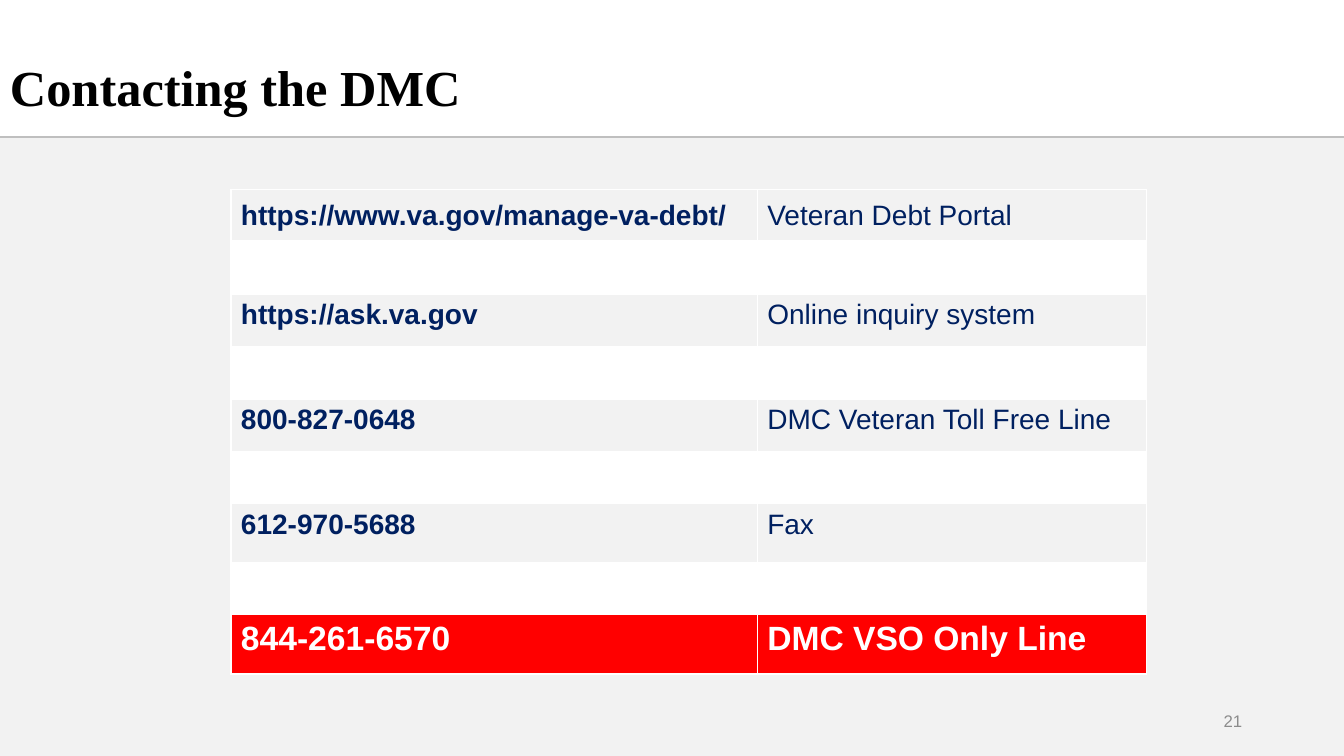
"""Build the slide that lists the ways of contacting the DMC."""
from dataclasses import dataclass

from lxml import etree
from pptx import Presentation
from pptx.dml.color import RGBColor
from pptx.enum import shapes, text
from pptx.oxml import ns
from pptx.util import Inches, Pt


@dataclass(frozen=True)
class Theme:
    white: RGBColor = RGBColor(0xFF, 0xFF, 0xFF)
    black: RGBColor = RGBColor(0, 0, 0)
    panel: RGBColor = RGBColor(0xF2, 0xF2, 0xF2)
    rule: RGBColor = RGBColor(0xBF, 0xBF, 0xBF)
    muted: RGBColor = RGBColor(0x8C, 0x8C, 0x8C)
    navy: RGBColor = RGBColor(0, 0x20, 0x60)
    alert: RGBColor = RGBColor(0xFF, 0, 0)
    heading: str = "Times New Roman"
    body: str = "Arial"
    title_size: int = 36
    vso_size: int = 24
    contact_size: int = 20
    number_size: int = 12


theme = Theme()


def write(frame, words, name, size, color, bold=False):
    """Put one styled paragraph in a text frame and return it."""
    para = frame.paragraphs[0]
    para.text = words
    font = para.font
    font.name, font.size, font.bold = name, Pt(size), bold
    font.color.rgb = color
    return para


def set_borders(cell, bottom, top):
    """Draw white borders of the given top and bottom widths around a cell."""
    properties = cell._tc.get_or_add_tcPr()
    widths = {"a:lnL": 1, "a:lnR": 1, "a:lnT": top, "a:lnB": bottom}
    for index, (tag, width) in enumerate(widths.items()):
        line = etree.Element(ns.qn(tag), w=str(Pt(width)))
        fill = etree.SubElement(line, ns.qn("a:solidFill"))
        etree.SubElement(fill, ns.qn("a:srgbClr"), val=str(theme.white))
        properties.insert(index, line)


deck = Presentation()
deck.slide_width, deck.slide_height = Inches(13.33), Inches(7.5)
page = deck.slides.add_slide(deck.slide_layouts[6])
page.background.fill.solid()
page.background.fill.fore_color.rgb = theme.white

panel = page.shapes.add_shape(
    shapes.MSO_SHAPE.RECTANGLE, 0, Inches(1.37), Inches(13.33), Inches(6.13))
panel.shadow.inherit = False
panel.fill.solid()
panel.fill.fore_color.rgb = theme.panel
panel.line.fill.background()

rule = page.shapes.add_connector(
    shapes.MSO_CONNECTOR.STRAIGHT, 0, Inches(1.36), Inches(13.33), Inches(1.36))
rule.line.color.rgb = theme.rule
rule.line.width = Pt(1.5)
etree.SubElement(rule._element.spPr, ns.qn("a:effectLst"))

number_box = page.shapes.add_textbox(Inches(9.42), Inches(6.95), Inches(3), Inches(0.4))
number_box.text_frame.word_wrap = True
number_box.text_frame.vertical_anchor = text.MSO_ANCHOR.MIDDLE
number = write(number_box.text_frame, "21", theme.body, theme.number_size, theme.muted)
number.alignment = text.PP_ALIGN.RIGHT

title_box = page.shapes.add_textbox(0, Inches(0.42), Inches(9), Inches(0.95))
title_box.text_frame.word_wrap = True
title_box.text_frame.vertical_anchor = text.MSO_ANCHOR.MIDDLE
title = write(title_box.text_frame, "Contacting the DMC", theme.heading,
              theme.title_size, theme.black, bold=True)
title.line_spacing = 0.9

contacts = [
    ("https://www.va.gov/manage-va-debt/", "Veteran Debt Portal"),
    ("https://ask.va.gov", "Online inquiry system"),
    ("800-827-0648", "DMC Veteran Toll Free Line"),
    ("612-970-5688", "Fax"),
    ("844-261-6570", "DMC VSO Only Line"),
]
row_heights = [0.52] * 6 + [0.58, 0.52, 0.59]
column_widths = [5.22, 3.86]
last_row = len(row_heights) - 1

table = page.shapes.add_table(
    len(row_heights), len(column_widths), Inches(2.29), Inches(1.88),
    Inches(sum(column_widths)), Inches(sum(row_heights))).table
for column, width in zip(table.columns, column_widths):
    column.width = Inches(width)

for row_index, height in enumerate(row_heights):
    table.rows[row_index].height = Inches(height)
    is_spacer = row_index % 2 == 1
    is_vso = row_index == last_row
    for column_index in range(len(column_widths)):
        cell = table.cell(row_index, column_index)
        cell.fill.solid()
        cell.fill.fore_color.rgb = (
            theme.alert if is_vso else theme.white if is_spacer else theme.panel)
        set_borders(cell, bottom=3 if row_index == 0 else 1, top=3 if row_index == 1 else 1)
        if row_index == 0:
            cell.vertical_anchor = text.MSO_ANCHOR.MIDDLE
        if not is_spacer:
            write(cell.text_frame, contacts[row_index // 2][column_index], theme.body,
                  theme.vso_size if is_vso else theme.contact_size,
                  theme.white if is_vso else theme.navy,
                  bold=is_vso or column_index == 0)

deck.save("out.pptx")
